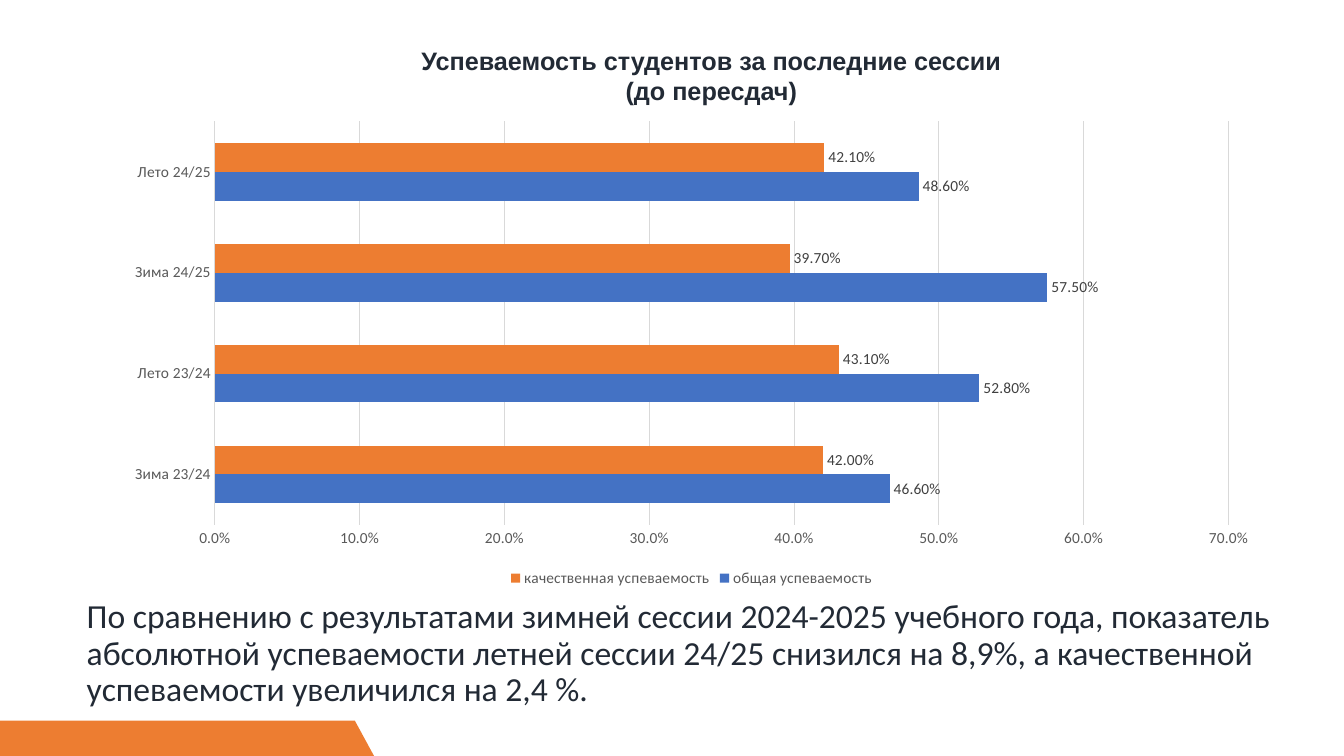
from dataclasses import dataclass

from pptx import Presentation
from pptx.chart.data import CategoryChartData
from pptx.dml.color import RGBColor
from pptx.enum.chart import XL_CHART_TYPE as ChartType
from pptx.enum.chart import XL_LABEL_POSITION as LabelPosition
from pptx.enum.chart import XL_LEGEND_POSITION as LegendPosition
from pptx.enum.chart import XL_TICK_MARK as TickMark
from pptx.enum.text import MSO_ANCHOR as Anchor
from pptx.enum.text import PP_ALIGN as Align
from pptx.util import Inches, Pt


@dataclass(frozen=True)
class Theme:
    """Colours, fonts and type sizes of the slide."""
    ink: str = "222A35"
    axis_text: str = "595959"
    label_text: str = "404040"
    grid: str = "D9D9D9"
    blue: str = "4472C4"
    orange: str = "ED7D31"
    body_font: str = "Calibri"
    heading_font: str = "Arial"
    chart_size: int = 11
    heading_size: int = 18
    body_size: int = 24


THEME = Theme()
SESSIONS = ["Зима 23/24", "Лето 23/24", "Зима 24/25", "Лето 24/25"]
RESULTS = [
    ("общая успеваемость", [0.466, 0.528, 0.575, 0.486], THEME.blue),
    ("качественная успеваемость", [0.42, 0.431, 0.397, 0.421], THEME.orange),
]
HEADING = ["Успеваемость студентов за последние сессии", "(до пересдач)"]
CONCLUSION = (
    "По сравнению с результатами зимней сессии 2024-2025 учебного года, "
    "показатель абсолютной успеваемости летней сессии 24/25 снизился на 8,9%, "
    "а качественной успеваемости увеличился на 2,4 %."
)


def style_font(font, name, size, color, bold=False):
    """Set the typeface, size, colour and weight of a font."""
    font.name = name
    font.size = Pt(size)
    font.bold = bold
    font.color.rgb = RGBColor.from_string(color)


def style_line(line, color):
    """Give a chart line its colour and thin width."""
    line.color.rgb = RGBColor.from_string(color)
    line.width = Pt(0.75)


def add_conclusion(slide):
    """Write the conclusion into the title placeholder below the chart."""
    conclusion = slide.shapes.title
    conclusion.left, conclusion.top = Inches(0.76), Inches(5.89)
    conclusion.width, conclusion.height = Inches(12.01), Inches(1.2)
    frame = conclusion.text_frame
    frame.word_wrap = True
    frame.vertical_anchor = Anchor.MIDDLE
    paragraph = frame.paragraphs[0]
    paragraph.alignment = Align.LEFT
    paragraph.line_spacing = 0.9
    run = paragraph.add_run()
    run.text = CONCLUSION
    style_font(run.font, THEME.body_font, THEME.body_size, THEME.ink)


def add_heading(slide):
    """Write the centred chart heading."""
    heading = slide.shapes.add_textbox(
        Inches(3.9), Inches(0.4), Inches(6.31), Inches(0.71))
    frame = heading.text_frame
    frame.word_wrap = False
    for index, line in enumerate(HEADING):
        paragraph = frame.add_paragraph() if index else frame.paragraphs[0]
        paragraph.alignment = Align.CENTER
        run = paragraph.add_run()
        run.text = line
        style_font(run.font, THEME.heading_font, THEME.heading_size,
                   THEME.ink, bold=True)


def style_axes(chart):
    """Format the session axis and the percentage axis."""
    for axis in (chart.category_axis, chart.value_axis):
        axis.major_tick_mark = axis.minor_tick_mark = TickMark.NONE
        style_font(axis.tick_labels.font, THEME.body_font,
                   THEME.chart_size, THEME.axis_text)
    style_line(chart.category_axis.format.line, THEME.grid)
    percent = chart.value_axis
    percent.minimum_scale, percent.maximum_scale = 0, 0.7
    percent.major_unit = 0.1
    percent.format.line.fill.background()
    style_line(percent.major_gridlines.format.line, THEME.grid)
    percent.tick_labels.number_format = "0.0%"
    percent.tick_labels.number_format_is_linked = False


def style_series(series, color):
    """Colour one series and label its bars."""
    series.format.fill.solid()
    series.format.fill.fore_color.rgb = RGBColor.from_string(color)
    labels = series.data_labels
    labels.show_value = True
    labels.position = LabelPosition.OUTSIDE_END
    labels.number_format = "0.00%"
    labels.number_format_is_linked = False
    style_font(labels.font, THEME.body_font, THEME.chart_size,
               THEME.label_text)


def add_results_chart(slide):
    """Add the clustered bars of results by session."""
    results = CategoryChartData(number_format="0.00%")
    results.categories = SESSIONS
    for name, values, _ in RESULTS:
        results.add_series(name, values)
    chart = slide.shapes.add_chart(
        ChartType.BAR_CLUSTERED, Inches(1.11), Inches(1.11),
        Inches(11.5), Inches(4.76), results).chart
    chart.has_title = False
    chart.font.name = THEME.body_font
    chart.font.size = Pt(THEME.chart_size)
    chart.has_legend = True
    chart.legend.position = LegendPosition.BOTTOM
    chart.legend.include_in_layout = False
    style_font(chart.legend.font, THEME.body_font, THEME.chart_size,
               THEME.axis_text)
    style_axes(chart)
    bars = chart.plots[0]
    bars.gap_width, bars.overlap = 150, 0
    bars.vary_by_categories = False
    for series, (_, _, color) in zip(bars.series, RESULTS):
        style_series(series, color)


def add_corner_band(slide):
    """Draw the slanted band in the bottom left corner."""
    builder = slide.shapes.build_freeform(
        Inches(0), Inches(7.15), scale=1.0)
    corners = [(3.52, 7.15), (3.71, 7.5), (0, 7.5)]
    builder.add_line_segments(
        [(Inches(x), Inches(y)) for x, y in corners], close=True)
    band = builder.convert_to_shape()
    band.shadow.inherit = False
    band.fill.solid()
    band.fill.fore_color.rgb = RGBColor.from_string(THEME.orange)
    band.line.fill.background()


def main():
    """Build the slide and save it."""
    deck = Presentation()
    deck.slide_width, deck.slide_height = Inches(13.33), Inches(7.5)
    slide = deck.slides.add_slide(deck.slide_layouts[5])
    add_conclusion(slide)
    add_results_chart(slide)
    add_heading(slide)
    add_corner_band(slide)
    deck.save("out.pptx")


if __name__ == "__main__":
    main()
